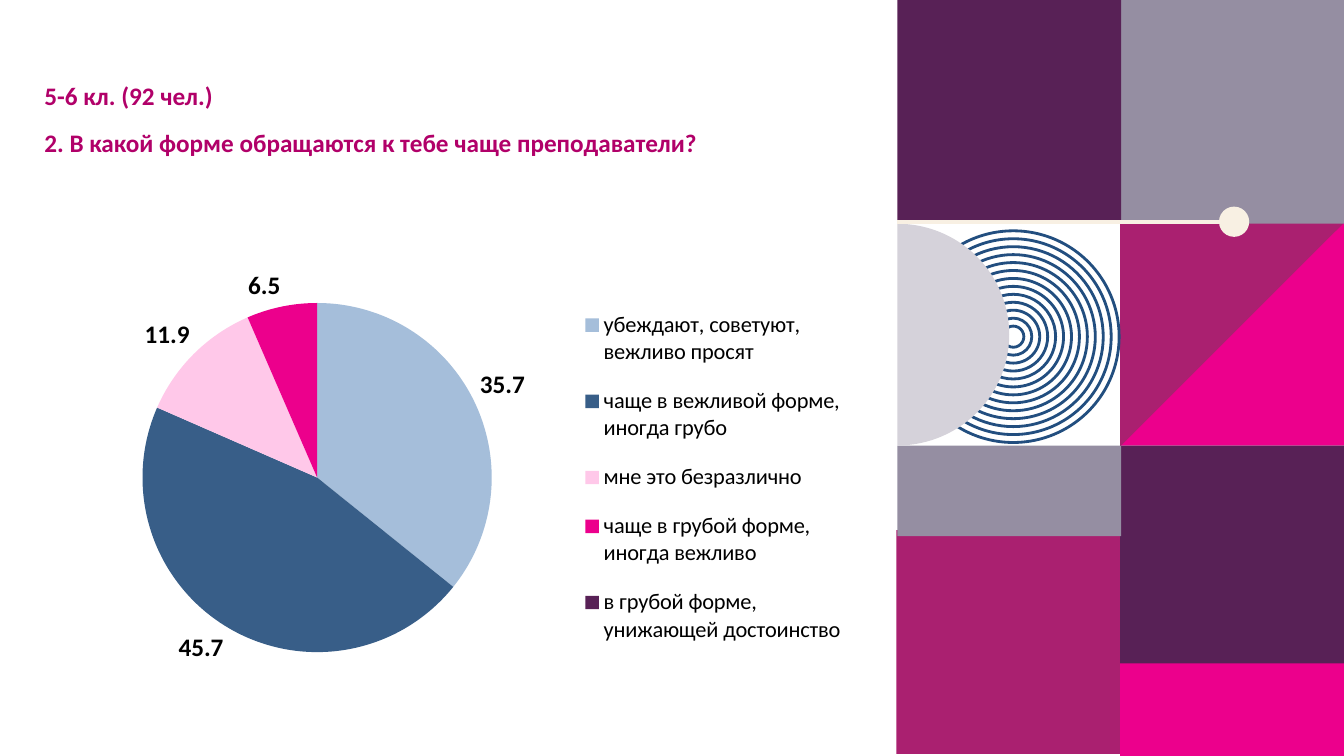
import math
from typing import NamedTuple

from lxml import etree
from pptx import Presentation
from pptx.chart.data import CategoryChartData
from pptx.dml.color import RGBColor
from pptx.enum.chart import XL_CHART_TYPE, XL_LABEL_POSITION, XL_LEGEND_POSITION
from pptx.enum.shapes import MSO_CONNECTOR, MSO_SHAPE
from pptx.enum.text import MSO_ANCHOR, MSO_AUTO_SIZE
from pptx.oxml.ns import qn
from pptx.util import Emu, Pt

PIE = XL_CHART_TYPE.PIE
OUTSIDE_END = XL_LABEL_POSITION.OUTSIDE_END
LEGEND_RIGHT = XL_LEGEND_POSITION.RIGHT
STRAIGHT = MSO_CONNECTOR.STRAIGHT
RECTANGLE = MSO_SHAPE.RECTANGLE
OVAL = MSO_SHAPE.OVAL
TOP = MSO_ANCHOR.TOP
NO_AUTOFIT = MSO_AUTO_SIZE.NONE

EMU_PER_PX = 9144
FONT = "Calibri"
COLORS = {
    "black": "000000",
    "heading": "B10069",
    "pink": "EC008C",
    "magenta": "AA2070",
    "lavender": "958EA2",
    "plum": "582156",
    "navy": "224E7F",
    "mist": "D5D2DA",
    "cream": "F8F0E3",
    "light_blue": "A5BEDA",
    "blue": "385E88",
    "pale_pink": "FFC8E9",
}


class Box(NamedTuple):
    left: int
    top: int
    width: int
    height: int


class Block(NamedTuple):
    box: Box
    color: str


class Answer(NamedTuple):
    label: str
    percent: float
    color: str


class Area(NamedTuple):
    x: float
    y: float
    w: float
    h: float


BACK_BLOCKS = [
    Block(Box(1111, 220, 222, 222), "pink"),
    Block(Box(1111, 0, 222, 222), "lavender"),
    Block(Box(890, -1, 222, 222), "plum"),
    Block(Box(889, 526, 222, 222), "magenta"),
    Block(Box(1111, 442, 222, 222), "plum"),
    Block(Box(1111, 658, 222, 92), "pink"),
]
FRONT_BLOCK = Block(Box(890, 442, 222, 90), "lavender")
TRIANGLE = [(1333, 221), (1111, 443), (1111, 221)]
RING_CENTER = (1005, 334)
RING_COUNT, RING_OUTER, RING_INNER = 13, 210, 21
HALF_DISC_CENTER = (890, 332)
HALF_DISC_WIDTH, HALF_DISC_RADIUS = 111, 110
ARC_STEPS = 60

HEADING = ["5-6 кл. (92 чел.)", "2. В какой форме обращаются к тебе чаще преподаватели?"]
HEADING_BOX = Box(34, 71, 810, 590)
CHART_BOX = Box(72, 253, 770, 433)
PIE_AREA = Area(0.09, 0.11, 0.45, 0.8)
LEGEND_AREA = Area(0.65, 0.08, 0.35, 0.86)
ANSWERS = [
    Answer("убеждают, советуют, вежливо просят", 35.7, "light_blue"),
    Answer("чаще в вежливой форме, иногда грубо", 45.7, "blue"),
    Answer("мне это безразлично", 11.9, "pale_pink"),
    Answer("чаще в грубой форме, иногда вежливо", 6.5, "pink"),
    Answer("в грубой форме, унижающей достоинство", 0, "plum"),
]


def px(length: float) -> Emu:
    return Emu(round(length * EMU_PER_PX))


def rgb(name: str) -> RGBColor:
    return RGBColor.from_string(COLORS[name])


def place(box: Box) -> list[Emu]:
    return [px(length) for length in box]


def fill_plain(shape, color: str) -> None:
    shape.shadow.inherit = False
    shape.fill.solid()
    shape.fill.fore_color.rgb = rgb(color)
    shape.line.fill.background()


def draw_block(slide, block: Block, kind=RECTANGLE) -> None:
    fill_plain(slide.shapes.add_shape(kind, *place(block.box)), block.color)


def draw_polygon(slide, points: list[tuple[float, float]], color: str) -> None:
    start, *others = [(px(x), px(y)) for x, y in points]
    builder = slide.shapes.build_freeform(*start, scale=1.0)
    builder.add_line_segments(others, close=True)
    fill_plain(builder.convert_to_shape(), color)


def draw_rings(slide) -> None:
    group = slide.shapes.add_group_shape()
    center_x, center_y = RING_CENTER
    step = (RING_OUTER - RING_INNER) / (RING_COUNT - 1)
    for index in range(RING_COUNT):
        size = RING_OUTER - index * step
        ring = group.shapes.add_shape(
            OVAL, px(center_x - size / 2), px(center_y - size / 2), px(size), px(size))
        ring.shadow.inherit = False
        ring.fill.background()
        ring.line.color.rgb = rgb("navy")
        ring.line.width = Pt(2)


def draw_half_disc(slide) -> None:
    center_x, center_y = HALF_DISC_CENTER
    angles = [math.pi * (step / ARC_STEPS - 0.5) for step in range(ARC_STEPS + 1)]
    points = [(center_x + HALF_DISC_WIDTH * math.cos(angle),
               center_y + HALF_DISC_RADIUS * math.sin(angle)) for angle in angles]
    draw_polygon(slide, points, "mist")


def draw_pointer(slide) -> None:
    connector = slide.shapes.add_connector(STRAIGHT, px(890), px(220), px(1223), px(220))
    connector.line.color.rgb = rgb("cream")
    connector.line.width = Pt(3)
    etree.SubElement(connector.element.spPr, qn("a:effectLst"))
    draw_block(slide, Block(Box(1209, 205, 30, 30), "cream"), OVAL)


def write_heading(slide) -> None:
    title, body = slide.placeholders
    title.element.getparent().remove(title.element)
    body.left, body.top, body.width, body.height = place(HEADING_BOX)
    text_frame = body.text_frame
    text_frame.text = "\n".join(HEADING)
    text_frame.auto_size = NO_AUTOFIT
    text_frame.vertical_anchor = TOP
    for index, paragraph in enumerate(text_frame.paragraphs):
        properties = paragraph._p.get_or_add_pPr()
        properties.set("marL", str(px(38)))
        properties.set("indent", str(px(-38)))
        etree.SubElement(properties, qn("a:buNone"))
        paragraph.line_spacing = Pt(24)
        paragraph.space_before = Pt(10 if index else 0)
        for run in paragraph.runs:
            run.font.name = FONT
            run.font.size = Pt(18)
            run.font.bold = True
            run.font.color.rgb = rgb("heading")


def make_layout(area: Area, target: str | None = None):
    layout = etree.Element(qn("c:layout"))
    manual = etree.SubElement(layout, qn("c:manualLayout"))
    settings = {"layoutTarget": target} if target else {}
    settings |= {"xMode": "edge", "yMode": "edge", **area._asdict()}
    for name, value in settings.items():
        etree.SubElement(manual, qn(f"c:{name}")).set("val", str(value))
    return layout


def draw_chart(slide) -> None:
    data = CategoryChartData()
    data.categories = [answer.label for answer in ANSWERS]
    data.add_series("Series 1", [answer.percent for answer in ANSWERS])
    chart = slide.shapes.add_chart(PIE, *place(CHART_BOX), data).chart
    chart.has_title = False
    chart.font.name = FONT
    chart.font.size = Pt(18)
    chart.font.color.rgb = rgb("black")
    chart.has_legend = True
    chart.legend.position = LEGEND_RIGHT
    chart.legend.include_in_layout = False
    chart.legend.font.name = FONT
    chart.legend.font.size = Pt(16)
    chart.legend.font.color.rgb = rgb("black")
    plot = chart.plots[0]
    plot.vary_by_categories = True
    for index, answer in enumerate(ANSWERS):
        point = plot.series[0].points[index]
        point.format.fill.solid()
        point.format.fill.fore_color.rgb = rgb(answer.color)
        point.format.line.fill.background()
    plot.has_data_labels = True
    labels = plot.data_labels
    labels.show_value = True
    labels.show_percentage = False
    labels.position = OUTSIDE_END
    labels.number_format = "0.0;;"
    labels.number_format_is_linked = False
    labels.font.name = FONT
    labels.font.size = Pt(18)
    labels.font.bold = True
    labels.font.color.rgb = rgb("black")
    plot_area = chart.element.find(".//" + qn("c:plotArea"))
    legend = chart.element.find(".//" + qn("c:legend"))
    for parent in (plot_area, legend):
        for layout in parent.findall(qn("c:layout")):
            parent.remove(layout)
    plot_area.insert(0, make_layout(PIE_AREA, "inner"))
    legend.find(qn("c:overlay")).addprevious(make_layout(LEGEND_AREA))


def main() -> None:
    presentation = Presentation()
    presentation.slide_width, presentation.slide_height = px(1333), px(750)
    slide = presentation.slides.add_slide(presentation.slide_layouts[1])
    write_heading(slide)
    draw_block(slide, BACK_BLOCKS[0])
    draw_polygon(slide, TRIANGLE, "magenta")
    for block in BACK_BLOCKS[1:]:
        draw_block(slide, block)
    draw_rings(slide)
    draw_block(slide, FRONT_BLOCK)
    draw_half_disc(slide)
    draw_pointer(slide)
    draw_chart(slide)
    presentation.save("out.pptx")


if __name__ == "__main__":
    main()
